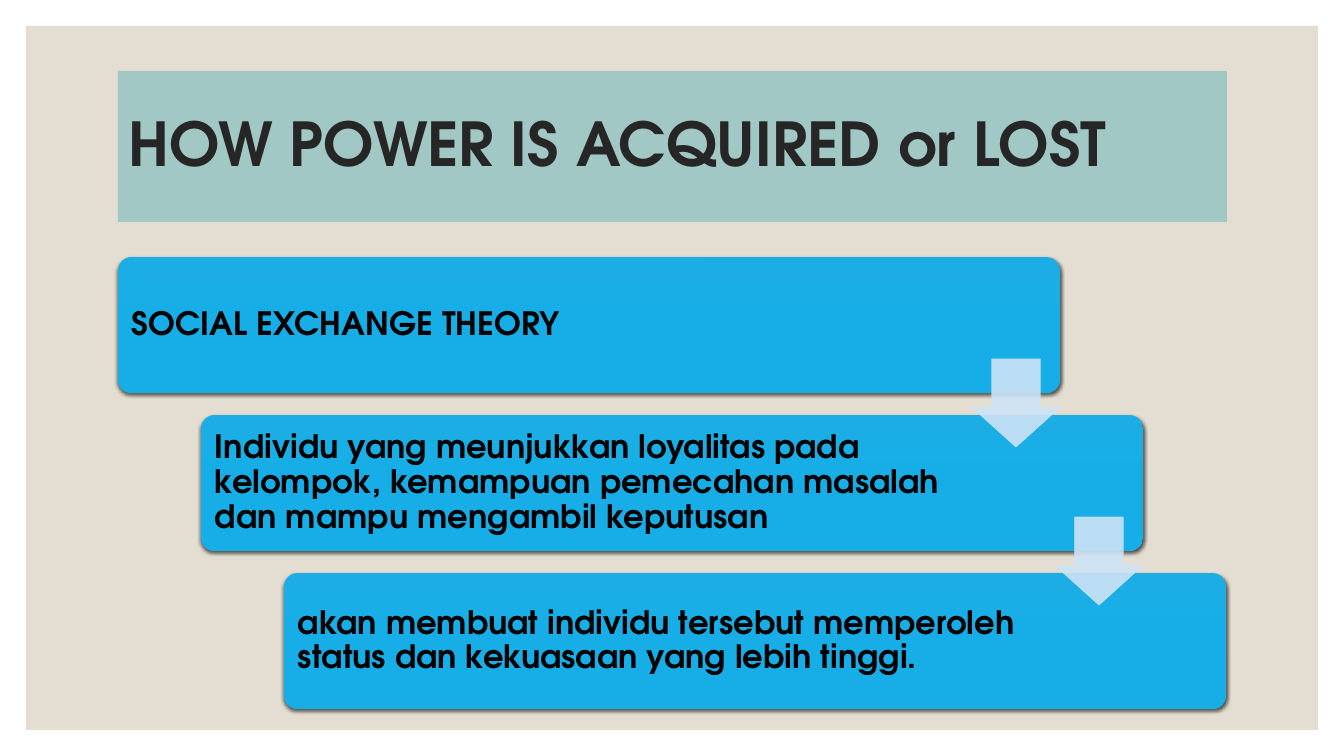
from lxml import etree
from pptx import Presentation
from pptx import util as u
from pptx.dml.color import RGBColor
from pptx.enum import shapes, text
from pptx.oxml import parse_xml
from pptx.oxml.ns import nsdecls, qn

SCALE = 914400 / 100.8  # EMU in one px
FONT = "TeX Gyre Adventor"
COLORS = {
    "panel": "E3DED1",
    "title_fill": "A1C8C5",
    "title_text": "262626",
    "card_top": "1CADE4",
    "card_bottom": "17AEE8",
    "card_text": "000000",
    "arrow": "CDE3F5",
}

# Staircase of cards: wording and right text margin
STEPS = [
    ("SOCIAL EXCHANGE THEORY", 148),
    ("Individu yang meunjukkan loyalitas pada kelompok, kemampuan "
     "pemecahan masalah dan mampu mengambil keputusan", 181),
    ("akan membuat individu tersebut memperoleh status dan kekuasaan "
     "yang lebih tinggi.", 181),
]
STEP_X, STEP_Y = 83, 158


def px(value):
    return u.Emu(round(value * SCALE))


def color(name):
    return RGBColor.from_string(COLORS[name])


def paint(fill, name):
    fill.solid()
    fill.fore_color.rgb = color(name)


def add_box(page, kind, left, top, width, height):
    box = page.shapes.add_shape(kind, px(left), px(top), px(width), px(height))
    box.shadow.inherit = False
    box.line.fill.background()
    return box


def write(box, wording, size, color_name):
    frame = box.text_frame
    frame.word_wrap = True
    frame.auto_size = text.MSO_AUTO_SIZE.NONE
    frame.vertical_anchor = text.MSO_ANCHOR.MIDDLE
    para = frame.paragraphs[0]
    para.text = wording
    para.alignment = text.PP_ALIGN.LEFT
    para.line_spacing = 0.9
    para.font.name = FONT
    para.font.size = u.Pt(size)
    para.font.bold = True
    para.font.color.rgb = color(color_name)


def add_title(page, wording):
    title = page.shapes.title
    title.left, title.top = px(118), px(71)
    title.width, title.height = px(1109), px(151)
    paint(title.fill, "title_fill")
    write(title, wording, 43.2, "title_text")


def add_card(page, index, wording, right_margin):
    card = add_box(page, shapes.MSO_SHAPE.ROUNDED_RECTANGLE,
                   118 + index * STEP_X, 257 + index * STEP_Y, 942, 136)
    card.adjustments[0] = 0.1
    card.fill.gradient()
    card.fill.gradient_angle = 270
    first, last = card.fill.gradient_stops
    first.position, last.position = 0, 0.5
    first.color.rgb, last.color.rgb = color("card_top"), color("card_bottom")

    # Soft shadow just below the card
    effects = card._element.spPr.find(qn("a:effectLst"))
    effects.append(parse_xml(
        f'<a:outerShdw {nsdecls("a")} blurRad="38100" dist="12700" '
        'dir="5400000" rotWithShape="0"><a:srgbClr val="000000">'
        '<a:alpha val="63000"/></a:srgbClr></a:outerShdw>'))

    write(card, wording, 23, "card_text")
    card.text_frame.margin_left = px(10)
    card.text_frame.margin_right = px(right_margin)


def add_arrow(page, index):
    arrow = add_box(page, shapes.MSO_SHAPE.DOWN_ARROW,
                    972 + index * STEP_X, 359 + index * STEP_Y, 88, 88)
    arrow.adjustments[0], arrow.adjustments[1] = 0.55, 0.45
    paint(arrow.fill, "arrow")
    paint(arrow.line.fill, "arrow")
    arrow.line.width = u.Pt(0.5)
    for tint in arrow._element.spPr.iter(qn("a:srgbClr")):
        etree.SubElement(tint, qn("a:alpha")).set("val", "90000")


def main():
    deck = Presentation()
    deck.slide_width, deck.slide_height = px(1344), px(756)
    page = deck.slides.add_slide(deck.slide_layouts[5])

    # Background panel, kept behind the title
    panel = add_box(page, shapes.MSO_SHAPE.RECTANGLE, 26, 26, 1292, 704)
    paint(panel.fill, "panel")
    page.shapes.title._element.addprevious(panel._element)

    add_title(page, "HOW POWER IS ACQUIRED or LOST")

    # Cards first, then the arrows that overlap them
    for index, (wording, right_margin) in enumerate(STEPS):
        add_card(page, index, wording, right_margin)
    for index in range(len(STEPS) - 1):
        add_arrow(page, index)

    deck.save("out.pptx")


if __name__ == "__main__":
    main()
